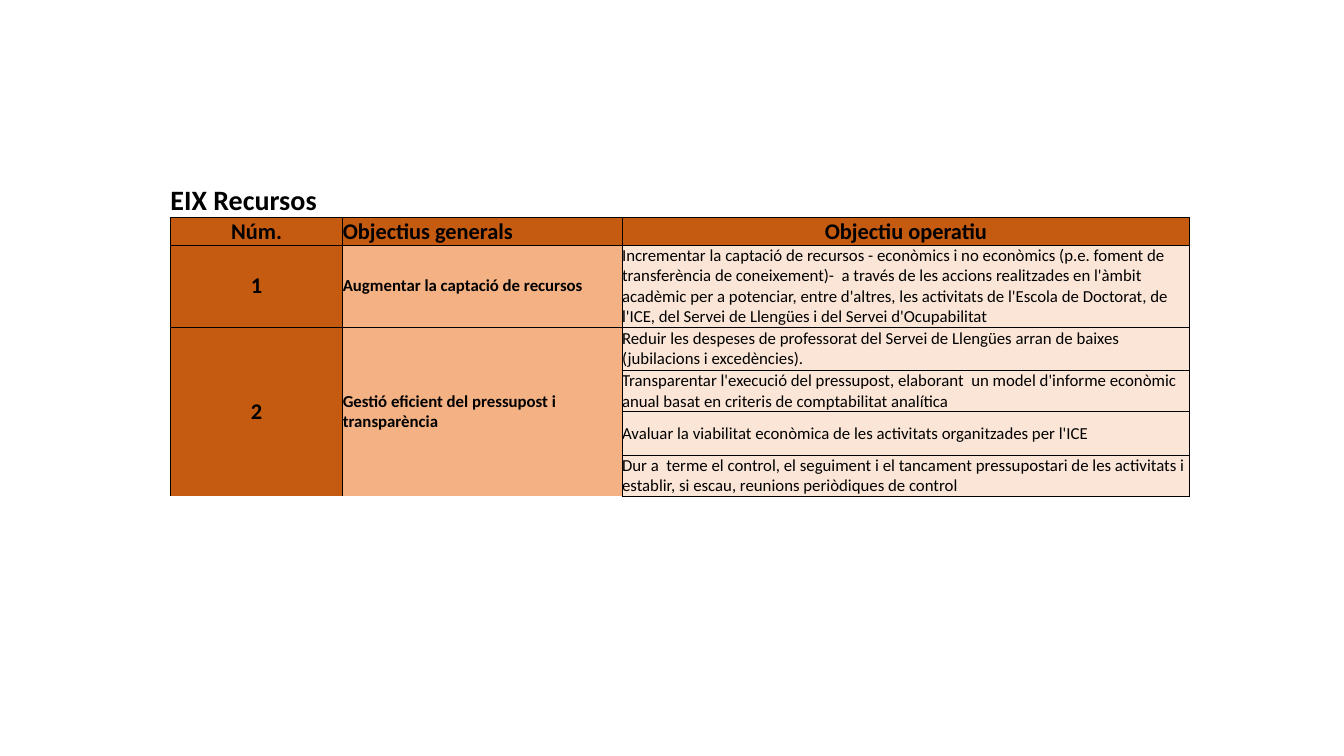
from dataclasses import dataclass

from lxml import etree
from pptx import Presentation
from pptx.dml.color import RGBColor
from pptx.enum.text import MSO_ANCHOR, PP_ALIGN
from pptx.oxml.ns import qn
from pptx.util import Inches, Pt

LEFT, CENTER = PP_ALIGN.LEFT, PP_ALIGN.CENTER
MIDDLE, BOTTOM = MSO_ANCHOR.MIDDLE, MSO_ANCHOR.BOTTOM


@dataclass(frozen=True)
class Theme:
    font: str = "Calibri"
    ink: str = "000000"
    dark: str = "C55A11"
    mid: str = "F4B183"
    pale: str = "FBE5D6"
    title: int = 20
    head: int = 16
    body: int = 12
    thick: float = 1
    thin: float = 0.5


THEME = Theme()
WIDTH, HEIGHT = 13.33, 7.5
BOX = (1.69, 1.82, 10.11, 3.1)
COLS = (1.71, 2.77, 5.63)
ROWS = (0.34, 0.27, 0.81, 0.43, 0.41, 0.43, 0.41)
TITLE = "EIX Recursos"
HEADS = ("Núm.", "Objectius generals", "Objectiu operatiu")
GOALS = (
    ("Augmentar la captació de recursos", (
        "Incrementar la captació de recursos - econòmics i no econòmics (p.e. foment de transferència de coneixement)-  a través de les accions realitzades en l'àmbit acadèmic per a potenciar, entre d'altres, les activitats de l'Escola de Doctorat, de l'ICE, del Servei de Llengües i del Servei d'Ocupabilitat",
    )),
    ("Gestió eficient del pressupost i transparència", (
        "Reduir les despeses de professorat del Servei de Llengües arran de baixes (jubilacions i excedències).",
        "Transparentar l'execució del pressupost, elaborant  un model d'informe econòmic anual basat en criteris de comptabilitat analítica",
        "Avaluar la viabilitat econòmica de les activitats organitzades per l'ICE",
        "Dur a  terme el control, el seguiment i el tancament pressupostari de les activitats i establir, si escau, reunions periòdiques de control",
    )),
)


def write(cell, text, size=THEME.body, bold=True, align=LEFT, anchor=MIDDLE):
    cell.vertical_anchor = anchor
    para = cell.text_frame.paragraphs[0]
    para.alignment = align
    run = para.add_run()
    run.text = text
    font = run.font
    font.name, font.size, font.bold = THEME.font, Pt(size), bold
    font.color.rgb = RGBColor.from_string(THEME.ink)


def dress(cell, fill, left, right, top, bottom):
    cell.margin_left = cell.margin_right = 0
    cell.margin_top = cell.margin_bottom = 0
    if fill:
        cell.fill.solid()
        cell.fill.fore_color.rgb = RGBColor.from_string(fill)
    else:
        cell.fill.background()
    props = cell._tc.get_or_add_tcPr()
    sides = zip("LRTB", (left, right, top, bottom))
    for spot, (side, width) in enumerate(sides):
        line = etree.Element(qn(f"a:ln{side}"), w=str(Pt(width)))
        props.insert(spot, line)
        if width:
            paint = etree.SubElement(line, qn("a:solidFill"))
            etree.SubElement(paint, qn("a:srgbClr"), val=THEME.ink)
        else:
            etree.SubElement(line, qn("a:noFill"))


def dress_row(grid, row, fills, first=True, last=True):
    thick, thin = THEME.thick, THEME.thin
    for col, fill in enumerate(fills):
        inner = thin if col == 2 else 0
        dress(grid.cell(row, col), fill, thin if col else thick, thin,
              thick if first else inner, thick if last else inner)


def add_goal(grid, row, num, goal, tasks):
    last = len(tasks) - 1
    for step, task in enumerate(tasks):
        dress_row(grid, row + step, (THEME.dark, THEME.mid, THEME.pale),
                  step == 0, step == last)
        write(grid.cell(row + step, 2), task, bold=False)
    if last:
        for col in (0, 1):
            grid.cell(row, col).merge(grid.cell(row + last, col))
    write(grid.cell(row, 0), str(num), size=THEME.head, align=CENTER)
    write(grid.cell(row, 1), goal)
    return row + len(tasks)


def add_plan(slide, box):
    left, top, width, height = box
    frame = slide.shapes.add_table(len(ROWS), len(COLS), Inches(left),
                                   Inches(top), Inches(width), Inches(height))
    grid = frame.table
    grid.first_row = grid.horz_banding = False
    for col, share in zip(grid.columns, COLS):
        col.width = Inches(width * share / sum(COLS))
    for row, share in zip(grid.rows, ROWS):
        row.height = Inches(height * share / sum(ROWS))

    for col in range(len(COLS)):
        dress(grid.cell(0, col), None, 0, 0, 0, THEME.thick)
    grid.cell(0, 0).merge(grid.cell(0, 1))
    write(grid.cell(0, 0), TITLE, size=THEME.title, anchor=BOTTOM)

    dress_row(grid, 1, (THEME.dark,) * len(COLS))
    for col, (text, align) in enumerate(zip(HEADS, (CENTER, LEFT, CENTER))):
        write(grid.cell(1, col), text, size=THEME.head, align=align)

    row = 2
    for num, (goal, tasks) in enumerate(GOALS, 1):
        row = add_goal(grid, row, num, goal, tasks)


def main():
    deck = Presentation()
    deck.slide_width, deck.slide_height = Inches(WIDTH), Inches(HEIGHT)
    slide = deck.slides.add_slide(deck.slide_layouts[6])
    add_plan(slide, BOX)
    deck.save("out.pptx")


if __name__ == "__main__":
    main()
